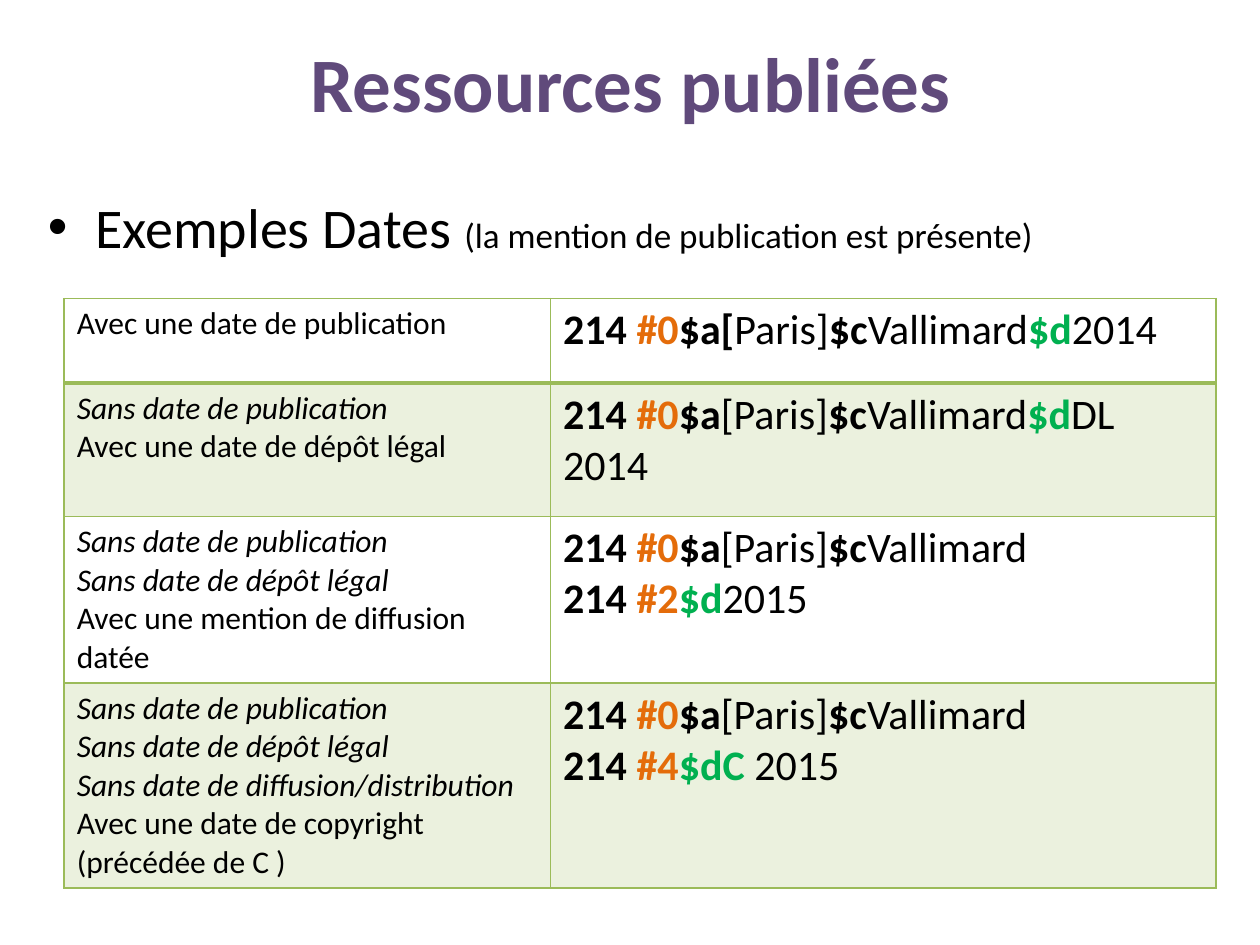
import pptx
import pptx.dml.color
import pptx.enum.text
import pptx.oxml
import pptx.oxml.ns
import pptx.util
from pptx.util import Inches

GREEN = "9BBB59"
BAND = "EBF1DE"
BLACK = "000000"
ALIGN = pptx.enum.text.PP_ALIGN
ANCHOR = pptx.enum.text.MSO_ANCHOR

PLAIN = {}
SLANT = {"italic": True}
BOLD = {"bold": True}
MARK = {"bold": True, "color": "E46C0A"}
DATE = {"bold": True, "color": "00B050"}

NO_DATE = ("Sans date de publication", SLANT)
NO_LEGAL = ("Sans date de dépôt légal", SLANT)
NO_DIST = ("Sans date de diffusion/distribution", SLANT)


def color(code):
    return pptx.dml.color.RGBColor.from_string(code)


def add_run(para, text, size, style):
    run = para.add_run()
    run.text = text
    look = {"name": "Calibri", "size": pptx.util.Pt(size),
            "bold": False, "italic": False, **style}
    run.font.color.rgb = color(look.pop("color", BLACK))
    for key, value in look.items():
        setattr(run.font, key, value)


def place(shape, left, top, width, height):
    box = {"left": left, "top": top, "width": width, "height": height}
    for key, value in box.items():
        setattr(shape, key, Inches(value))


def fill_text(frame, lines, size):
    """Write one paragraph for each list of (text, style) runs."""
    for i, runs in enumerate(lines):
        para = frame.add_paragraph() if i else frame.paragraphs[0]
        for text, style in runs:
            add_run(para, text, size, style)


def add_edges(cell, widths):
    """Draw the cell borders; widths maps a side (L, R, T, B) to points."""
    props = cell._tc.get_or_add_tcPr()
    space = pptx.oxml.ns.nsdecls("a")
    for i, side in enumerate("LRTB"):
        width = pptx.util.Pt(widths.get(side, 1))
        line = pptx.oxml.parse_xml(
            f'<a:ln{side} {space} w="{width}"><a:solidFill>'
            f'<a:srgbClr val="{GREEN}"/></a:solidFill></a:ln{side}>')
        props.insert(i, line)


def field(code="#0", end=(), place_runs=(("$a", BOLD), ("[Paris]", PLAIN))):
    """Return the runs of a 214 line that names place and publisher."""
    return [("214 ", BOLD), (code, MARK), *place_runs,
            ("$c", BOLD), ("Vallimard", PLAIN), *end]


def dated(code, mark, year):
    return [("214 ", BOLD), (code, MARK), (mark, DATE), (year, PLAIN)]


def add_title(slide):
    title = slide.shapes.title
    place(title, 0.51, 0.02, 9, 1.25)
    frame = title.text_frame
    frame.vertical_anchor = ANCHOR.MIDDLE
    frame.paragraphs[0].alignment = ALIGN.CENTER
    add_run(frame.paragraphs[0], "Ressources publiées", 44,
            {"bold": True, "color": "604A7B"})


def add_body(slide):
    body = slide.placeholders[1]
    place(body, 0.28, 0.84, 9.24, 6.3)
    frame = body.text_frame
    frame.margin_top = Inches(0.69)
    para = frame.paragraphs[0]
    para.alignment = ALIGN.JUSTIFY
    para.space_before = pptx.util.Pt(0)
    add_run(para, "Exemples Dates ", 32, PLAIN)
    add_run(para, "(la mention de publication est présente)", 20, PLAIN)


def add_grid(slide):
    rows = [
        (0.67, [[("Avec une date de publication", PLAIN)]],
         [field(end=[("$d", DATE), ("2014", PLAIN)],
                place_runs=[("$a[", BOLD), ("Paris]", PLAIN)])]),
        (1.06, [[NO_DATE], [("Avec une date de dépôt légal", PLAIN)]],
         [field(end=[("$d", DATE), ("DL 2014", PLAIN)])]),
        (1.21, [[NO_DATE], [NO_LEGAL],
                [("Avec une mention de diffusion datée", PLAIN)]],
         [field(), dated("#2", "$d", "2015")]),
        (1.49, [[NO_DATE], [NO_LEGAL], [NO_DIST],
                [("Avec une date de copyright (précédée de C )", PLAIN)]],
         [field(), dated("#4", "$dC ", "2015")]),
    ]
    frame = slide.shapes.add_table(
        len(rows), 2, Inches(0.51), Inches(2.37), Inches(9.13), Inches(4.63))
    table = frame.table
    table.first_row = table.horz_banding = False
    for col, width in zip(table.columns, (3.86, 5.28)):
        col.width = Inches(width)
    for i, (height, case, codes) in enumerate(rows):
        table.rows[i].height = Inches(height)
        edges = {0: {"B": 2}, 1: {"T": 2}}.get(i, {})
        for j, (lines, size) in enumerate(((case, 18), (codes, 24))):
            cell = table.cell(i, j)
            fill_text(cell.text_frame, lines, size)
            if i % 2:
                cell.fill.solid()
                cell.fill.fore_color.rgb = color(BAND)
            else:
                cell.fill.background()
            add_edges(cell, edges)


def main():
    deck = pptx.Presentation()
    deck.slide_width, deck.slide_height = Inches(10), Inches(7.5)
    slide = deck.slides.add_slide(deck.slide_layouts[1])
    add_title(slide)
    add_body(slide)
    add_grid(slide)
    deck.save("out.pptx")


if __name__ == "__main__":
    main()
